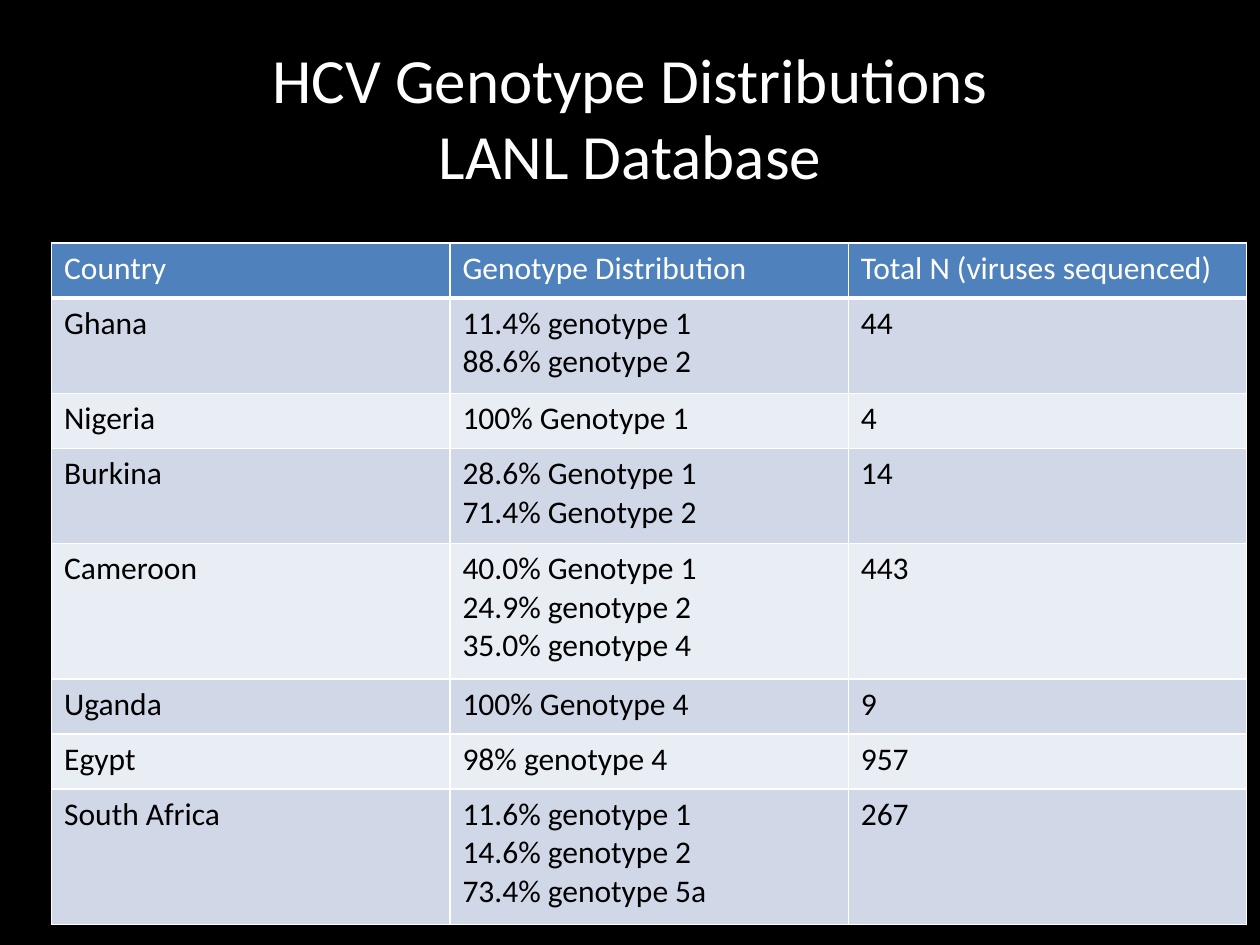
from lxml.etree import SubElement
from pptx import Presentation
from pptx.dml.color import RGBColor as RGB
from pptx.enum.text import MSO_ANCHOR as Anchor, PP_ALIGN as Align
from pptx.oxml.ns import qn
from pptx.util import Cm, Pt


def paint(fill, color):
    fill.solid()
    fill.fore_color.rgb = RGB.from_string(color)


def write(frame, text, size=18, color="000000", align=Align.LEFT):
    frame.word_wrap = True
    frame.text = text
    for para in frame.paragraphs:
        para.alignment = align
        for run in para.runs:
            run.font.name = "Calibri"
            run.font.size = Pt(size)
            paint(run.font.fill, color)


rows = [
    ("Country", "Genotype Distribution", "Total N (viruses sequenced)"),
    ("Ghana", "11.4% genotype 1\n88.6% genotype 2", "44"),
    ("Nigeria", "100% Genotype 1", "4"),
    ("Burkina", "28.6% Genotype 1\n71.4% Genotype 2", "14"),
    ("Cameroon", "40.0% Genotype 1\n24.9% genotype 2\n35.0% genotype 4", "443"),
    ("Uganda", "100% Genotype 4", "9"),
    ("Egypt", "98% genotype 4", "957"),
    ("South Africa", "11.6% genotype 1\n14.6% genotype 2\n73.4% genotype 5a", "267"),
]

deck = Presentation()
deck.slide_width, deck.slide_height = Cm(25.4), Cm(19.05)
slide = deck.slides.add_slide(deck.slide_layouts[6])
paint(slide.background.fill, "000000")

title = slide.shapes.add_textbox(Cm(1.27), Cm(0.76), Cm(22.86), Cm(3.18))
title.text_frame.vertical_anchor = Anchor.MIDDLE
write(title.text_frame, "HCV Genotype Distributions\vLANL Database",
      size=36, color="FFFFFF", align=Align.CENTER)

table = slide.shapes.add_table(
    len(rows), 3, Cm(1.04), Cm(4.9), Cm(24.08), Cm(13.8)).table
for col in table.columns:
    col.width = Cm(8.03)

for r, row in enumerate(rows):
    lines = row[1].count("\n") + 1
    table.rows[r].height = Cm(0.3 + 0.81 * lines)
    shade = "4F81BD" if r == 0 else "D0D8E8" if r % 2 else "E9EDF4"
    for c, text in enumerate(row):
        cell = table.cell(r, c)
        write(cell.text_frame, text, color="000000" if r else "FFFFFF")
        props = cell._tc.get_or_add_tcPr()
        for side in "LRTB":
            width = 3 if r == 0 and side == "B" else 1
            edge = SubElement(props, qn(f"a:ln{side}"), w=str(Pt(width)))
            ink = SubElement(edge, qn("a:solidFill"))
            SubElement(ink, qn("a:srgbClr"), val="FFFFFF")
        paint(cell.fill, shade)

deck.save("out.pptx")
